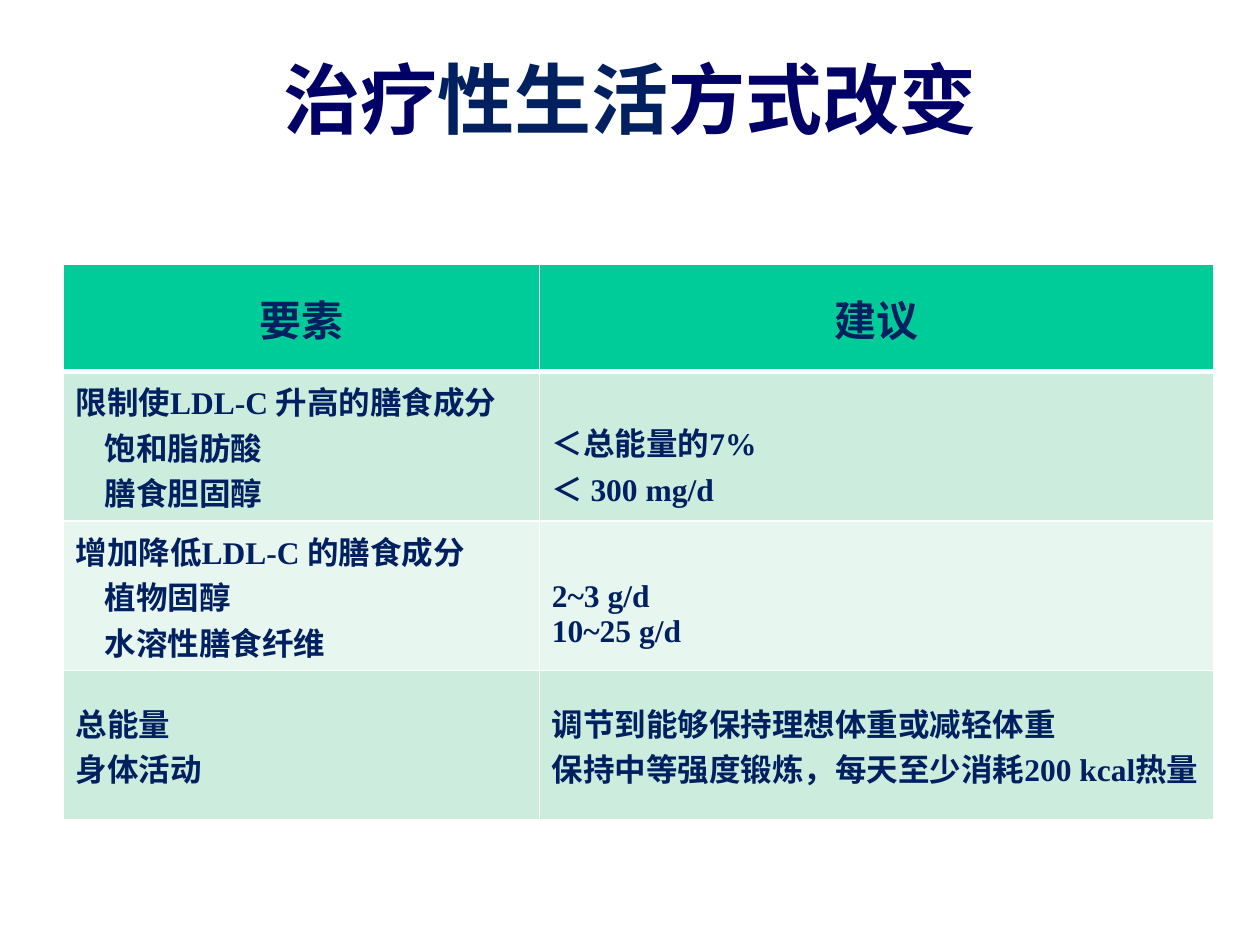
import pptx
import pptx.dml.color
import pptx.enum.text
import pptx.oxml
import pptx.oxml.ns
import pptx.util

Inches = pptx.util.Inches
CENTER = pptx.enum.text.PP_ALIGN.CENTER
MIDDLE = pptx.enum.text.MSO_ANCHOR.MIDDLE
CJK_FONT = "Noto Sans CJK JP"
NAVY = "002060"


def color(hex_string):
    return pptx.dml.color.RGBColor.from_string(hex_string)


def add_span(para, text, size=18, font="Times New Roman", fill=NAVY):
    span = para.add_run()
    span.text = text
    span.font.size = pptx.util.Pt(size)
    span.font.bold = True
    span.font.name = font
    span.font.color.rgb = color(fill)
    east_asian = pptx.oxml.parse_xml(
        f'<a:ea {pptx.oxml.ns.nsdecls("a")} typeface="{CJK_FONT}"/>')
    span.font._element.append(east_asian)


deck = pptx.Presentation()
deck.slide_width, deck.slide_height = Inches(10), Inches(7.5)
page = deck.slides.add_slide(deck.slide_layouts[5])

title = page.shapes.title
title.left, title.top = Inches(0.75), Inches(0.39)
title.width, title.height = Inches(8.5), Inches(0.77)
title.text_frame.vertical_anchor = MIDDLE
title_para = title.text_frame.paragraphs[0]
title_para.alignment = CENTER
for text, fill in [("治疗", "000066"), ("性生活", NAVY), ("方式改变", "000066")]:
    add_span(title_para, text, size=44, font=CJK_FONT, fill=fill)

# Each row: fill, left lines, right lines
rows = [
    ("00CC99", ["要素"], ["建议"]),
    ("CCECDE", ["限制使LDL-C 升高的膳食成分", "饱和脂肪酸", "膳食胆固醇"],
     ["＜总能量的7%", "＜ 300 mg/d"]),
    ("E7F6EF", ["增加降低LDL-C 的膳食成分", "植物固醇", "水溶性膳食纤维"],
     ["2~3 g/d", "10~25 g/d"]),
    ("CCECDE", ["总能量", "身体活动"],
     ["调节到能够保持理想体重或减轻体重", "保持中等强度锻炼，每天至少消耗200 kcal热量"]),
]
table = page.shapes.add_table(len(rows), 2, Inches(0.5), Inches(2.1),
                              Inches(9.13), Inches(4.39)).table
table.columns[0].width, table.columns[1].width = Inches(3.78), Inches(5.35)

for row_index, (fill, *columns) in enumerate(rows):
    is_header = row_index == 0
    table.rows[row_index].height = Inches(0.85 if is_header else 1.18)
    has_heading = len(columns[0]) == 3
    for column_index, lines in enumerate(columns):
        cell = table.cell(row_index, column_index)
        cell.vertical_anchor = MIDDLE
        properties = cell._tc.get_or_add_tcPr()
        for side in "LRTB":
            thick = (is_header and side == "B") or (row_index == 1 and side == "T")
            width = pptx.util.Pt(3 if thick else 1)
            properties.append(pptx.oxml.parse_xml(
                f'<a:ln{side} {pptx.oxml.ns.nsdecls("a")} w="{width}"><a:solidFill>'
                f'<a:srgbClr val="FFFFFF"/></a:solidFill></a:ln{side}>'))
        cell.fill.solid()
        cell.fill.fore_color.rgb = color(fill)
        if has_heading and column_index == 1:
            # Values line up with the items below the heading
            cell.margin_top = Inches(0.34)
        for line_index, line in enumerate(lines):
            frame = cell.text_frame
            para = frame.paragraphs[0] if line_index == 0 else frame.add_paragraph()
            if is_header:
                para.alignment = CENTER
            if has_heading and column_index == 0 and line_index > 0:
                para._p.get_or_add_pPr().set("marL", str(Inches(0.23)))
            add_span(para, line, size=24 if is_header else 18)

deck.save("out.pptx")
